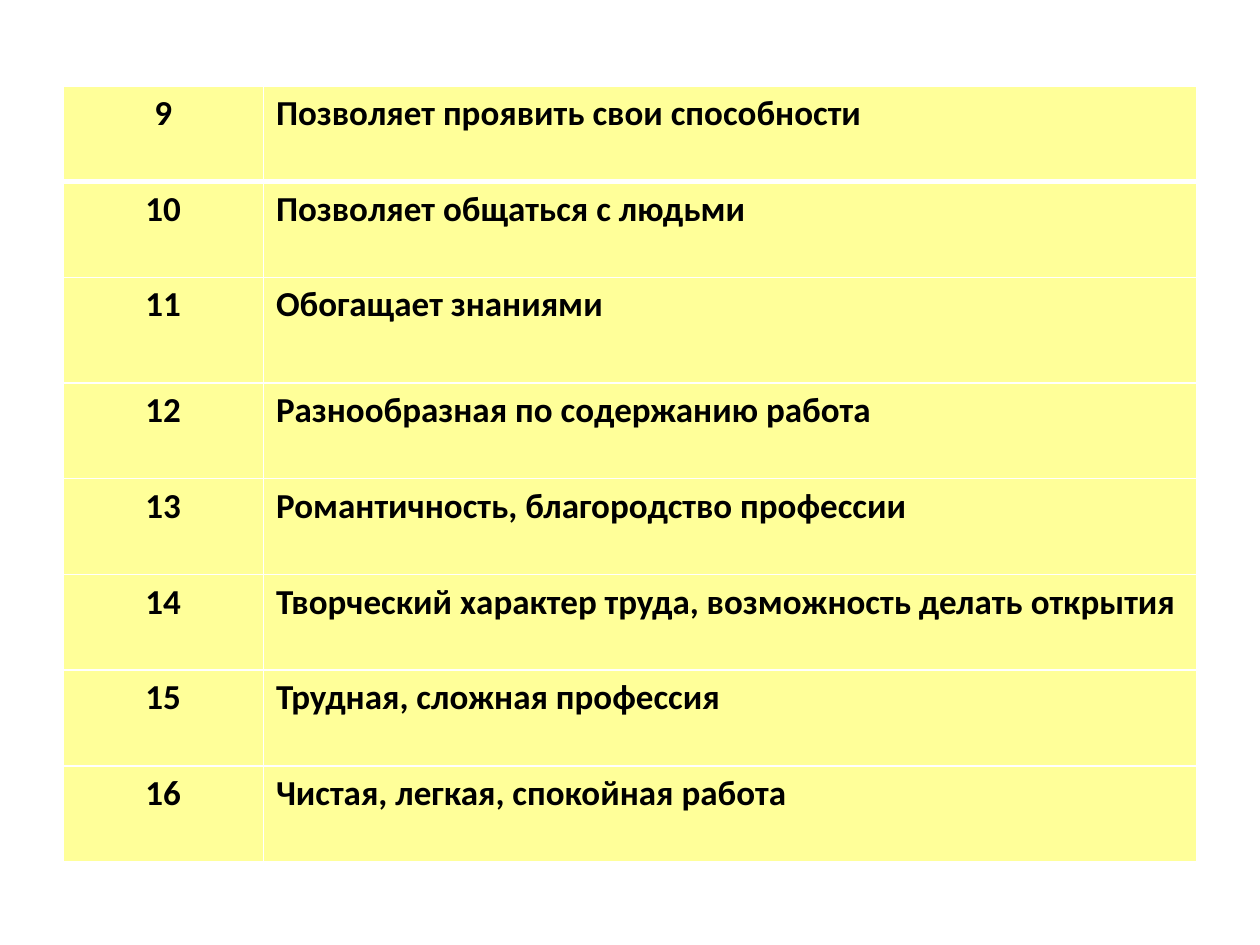
from dataclasses import dataclass

from lxml import etree
from pptx import Presentation
from pptx.dml.color import RGBColor
from pptx.enum import text
from pptx.oxml import ns
from pptx.util import Cm, Pt


@dataclass(frozen=True)
class Theme:
    """Colours and type of the slide."""
    ink: str = "000000"
    cell: str = "FFFF99"
    rule: str = "FFFFFF"
    font: str = "Calibri"
    size: int = 20
    thin: int = 1
    thick: int = 3


THEME = Theme()
FIRST_NUMBER = 9
MOTIVES = [
    "Позволяет проявить свои способности",
    "Позволяет общаться с людьми",
    "Обогащает знаниями",
    "Разнообразная по содержанию работа",
    "Романтичность, благородство профессии",
    "Творческий характер труда, возможность делать открытия",
    "Трудная, сложная профессия",
    "Чистая, легкая, спокойная работа",
]
NUMBER_WIDTH = 4.04
ROW_HEIGHT = 1.93
TALL_ROW, TALL_HEIGHT = 2, 2.13


def write(frame, wording, align, size=THEME.size, color=THEME.ink, bold=True):
    """Put one formatted paragraph into a text frame."""
    paragraph = frame.paragraphs[0]
    paragraph.alignment = align
    run = paragraph.add_run()
    run.text = wording
    run.font.name = THEME.font
    run.font.size = Pt(size)
    run.font.bold = bold
    run.font.color.rgb = RGBColor.from_string(color)


def rule_cell(cell, **widths):
    """Draw the cell's borders, with widths in points by side."""
    properties = cell._tc.get_or_add_tcPr()
    for side in "LRTB":
        width = Pt(widths.get(side, THEME.thin))
        line = etree.SubElement(properties, ns.qn(f"a:ln{side}"), w=str(width))
        fill = etree.SubElement(line, ns.qn("a:solidFill"))
        etree.SubElement(fill, ns.qn("a:srgbClr"), val=THEME.rule)


def add_motives(slide, left, top, width):
    """Place the numbered table of motives in a box given in centimetres."""
    heights = [ROW_HEIGHT] * len(MOTIVES)
    heights[TALL_ROW] = TALL_HEIGHT
    table = slide.shapes.add_table(
        len(MOTIVES), 2, Cm(left), Cm(top), Cm(width), Cm(sum(heights))).table
    table.horz_banding = False
    table.columns[0].width = Cm(NUMBER_WIDTH)
    table.columns[1].width = Cm(width - NUMBER_WIDTH)
    aligns = (text.PP_ALIGN.CENTER, text.PP_ALIGN.JUSTIFY)
    for index, (motive, height) in enumerate(zip(MOTIVES, heights)):
        row = table.rows[index]
        row.height = Cm(height)
        widths = {0: {"B": THEME.thick}, 1: {"T": THEME.thick}}.get(index, {})
        wordings = (str(FIRST_NUMBER + index), motive)
        for cell, wording, align in zip(row.cells, wordings, aligns):
            rule_cell(cell, **widths)
            cell.fill.solid()
            cell.fill.fore_color.rgb = RGBColor.from_string(THEME.cell)
            write(cell.text_frame, wording, align)


def main():
    """Build the slide and save it."""
    deck = Presentation()
    deck.slide_width, deck.slide_height = Cm(25.4), Cm(19.05)
    slide = deck.slides.add_slide(deck.slide_layouts[6])
    add_motives(slide, left=1.27, top=1.73, width=22.86)
    deck.save("out.pptx")


if __name__ == "__main__":
    main()
